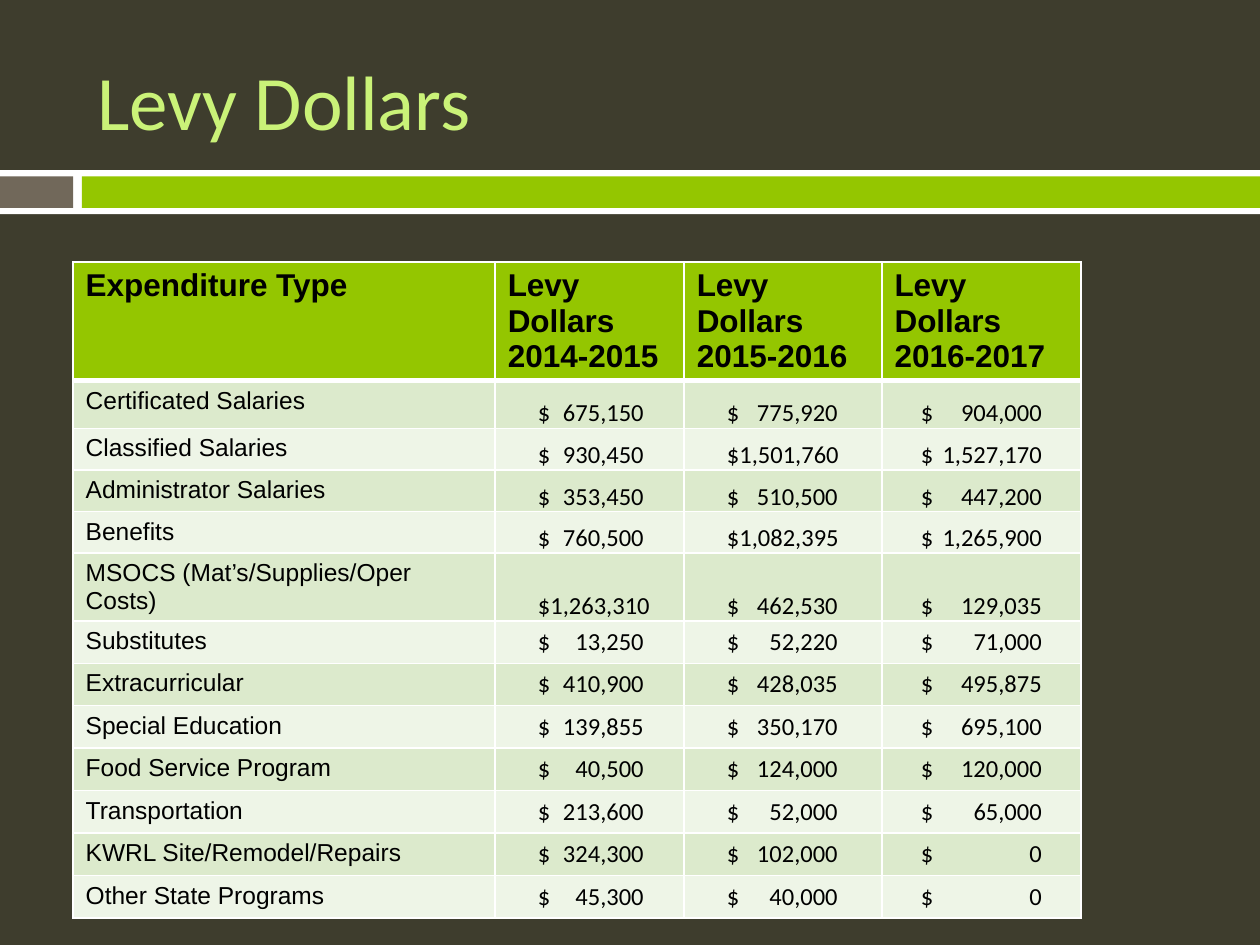
from lxml.etree import SubElement
from pptx import Presentation
from pptx.dml.color import RGBColor
from pptx.enum.shapes import MSO_SHAPE
from pptx.enum.text import MSO_ANCHOR, PP_ALIGN
from pptx.oxml import parse_xml
from pptx.oxml.ns import nsdecls, qn
from pptx.util import Inches, Pt

COLORS = {
    "background": "3E3D2D", "white": "FFFFFF", "taupe": "71685A",
    "green": "94C600", "title": "CAF278", "text": "000000",
    "odd": "DCEACC", "even": "EEF5E7",
}

HEADERS = ["Expenditure Type"] + [
    f"Levy Dollars\n{years}" for years in ("2014-2015", "2015-2016", "2016-2017")]
EXPENDITURES = [
    ("Certificated Salaries", "675,150", "775,920", "904,000"),
    ("Classified Salaries", "930,450", "1,501,760", "1,527,170"),
    ("Administrator Salaries", "353,450", "510,500", "447,200"),
    ("Benefits", "760,500", "1,082,395", "1,265,900"),
    ("MSOCS (Mat’s/Supplies/Oper Costs)", "1,263,310", "462,530", "129,035"),
    ("Substitutes", "13,250", "52,220", "71,000"),
    ("Extracurricular", "410,900", "428,035", "495,875"),
    ("Special Education", "139,855", "350,170", "695,100"),
    ("Food Service Program", "40,500", "124,000", "120,000"),
    ("Transportation", "213,600", "52,000", "65,000"),
    ("KWRL Site/Remodel/Repairs", "324,300", "102,000", "0"),
    ("Other State Programs", "45,300", "40,000", "0"),
]
TIGHT_AMOUNTS = {"1,501,760", "1,082,395", "1,263,310"}  # no gap after the $
BOTTOM_ROWS = 5  # first rows whose amounts sit at the foot of the cell
COL_WIDTHS = [3.35, 1.5, 1.57, 1.58]
# Per amount column: where the $ starts, and the right tab for the number
AMOUNT_COLUMNS = [(0.34, 0.84), (0.34, 0.88), (0.31, 0.96)]


def rgb(name):
    return RGBColor.from_string(COLORS[name])


def write(tf, text, size=14, font="Arial", color="text", bold=False,
          align=PP_ALIGN.LEFT):
    tf.word_wrap = True
    for i, line in enumerate(text.split("\n")):
        p = tf.paragraphs[0] if i == 0 else tf.add_paragraph()
        p.alignment = align
        r = p.add_run()
        r.text = line
        r.font.size, r.font.name, r.font.bold = Pt(size), font, bold
        r.font.color.rgb = rgb(color)


def add_band(s, left, top, width, height, color):
    sp = s.shapes.add_shape(MSO_SHAPE.RECTANGLE, Inches(left), Inches(top),
                            Inches(width), Inches(height))
    sp.shadow.inherit = False
    sp.fill.solid()
    sp.fill.fore_color.rgb = rgb(color)
    sp.line.fill.background()


def add_title(s, text):
    sp = s.shapes.title
    sp.left, sp.top = Inches(0.67), Inches(0.25)
    sp.width, sp.height = Inches(8.92), Inches(1.08)
    sp.text_frame.vertical_anchor = MSO_ANCHOR.MIDDLE
    write(sp.text_frame, text, size=44, font="Calibri", color="title")


def style_cell(cell, fill, top=1, bottom=1):
    cell.fill.solid()
    cell.fill.fore_color.rgb = rgb(fill)
    tc_pr = cell._tc.get_or_add_tcPr()
    widths = {"lnL": 1, "lnR": 1, "lnT": top, "lnB": bottom}
    for i, (side, width) in enumerate(widths.items()):
        tc_pr.insert(i, parse_xml(
            f'<a:{side} {nsdecls("a")} w="{Pt(width)}"><a:solidFill>'
            f'<a:srgbClr val="{COLORS["white"]}"/></a:solidFill></a:{side}>'))


def write_amount(cell, amount, start, tab, at_bottom):
    cell.margin_left, cell.margin_right = Inches(start), Inches(0.01)
    if at_bottom:
        cell.vertical_anchor = MSO_ANCHOR.BOTTOM
        cell.margin_top, cell.margin_bottom = Inches(0.01), 0
    gap = "" if amount in TIGHT_AMOUNTS else "\t"
    write(cell.text_frame, f"${gap}{amount}", font="Calibri")
    # Right tab stop lines up the numbers
    p_pr = cell.text_frame.paragraphs[0]._p.get_or_add_pPr()
    tabs = SubElement(p_pr, qn("a:tabLst"))
    SubElement(tabs, qn("a:tab"), pos=str(Inches(tab)), algn="r")


def add_levy_table(s):
    heights = [0.6, 0.38] + [0.33] * (len(EXPENDITURES) - 1)
    table = s.shapes.add_table(
        len(heights), len(COL_WIDTHS), Inches(0.58), Inches(2.08),
        Inches(sum(COL_WIDTHS)), Inches(sum(heights))).table
    for col, width in zip(table.columns, COL_WIDTHS):
        col.width = Inches(width)
    for row, height in zip(table.rows, heights):
        row.height = Inches(height)

    # Header row
    for c, header in enumerate(HEADERS):
        cell = table.cell(0, c)
        style_cell(cell, "green", bottom=3)
        write(cell.text_frame, header, size=18, bold=True)

    # Expenditure rows
    for r, (label, *amounts) in enumerate(EXPENDITURES, 1):
        for c in range(len(COL_WIDTHS)):
            style_cell(table.cell(r, c), "odd" if r % 2 else "even",
                       top=3 if r == 1 else 1)
        write(table.cell(r, 0).text_frame, label)
        for c, (amount, (start, tab)) in enumerate(zip(amounts, AMOUNT_COLUMNS), 1):
            write_amount(table.cell(r, c), amount, start, tab, r <= BOTTOM_ROWS)


def main():
    prs = Presentation()
    prs.slide_width, prs.slide_height = Inches(10), Inches(7.5)
    s = prs.slides.add_slide(prs.slide_layouts[5])
    s.background.fill.solid()
    s.background.fill.fore_color.rgb = rgb("background")

    # Divider bands
    add_band(s, 0, 1.35, 10, 0.35, "white")
    add_band(s, 0, 1.4, 0.58, 0.25, "taupe")
    add_band(s, 0.65, 1.4, 9.35, 0.25, "green")

    add_title(s, "Levy Dollars")
    add_levy_table(s)
    prs.save("out.pptx")


if __name__ == "__main__":
    main()
